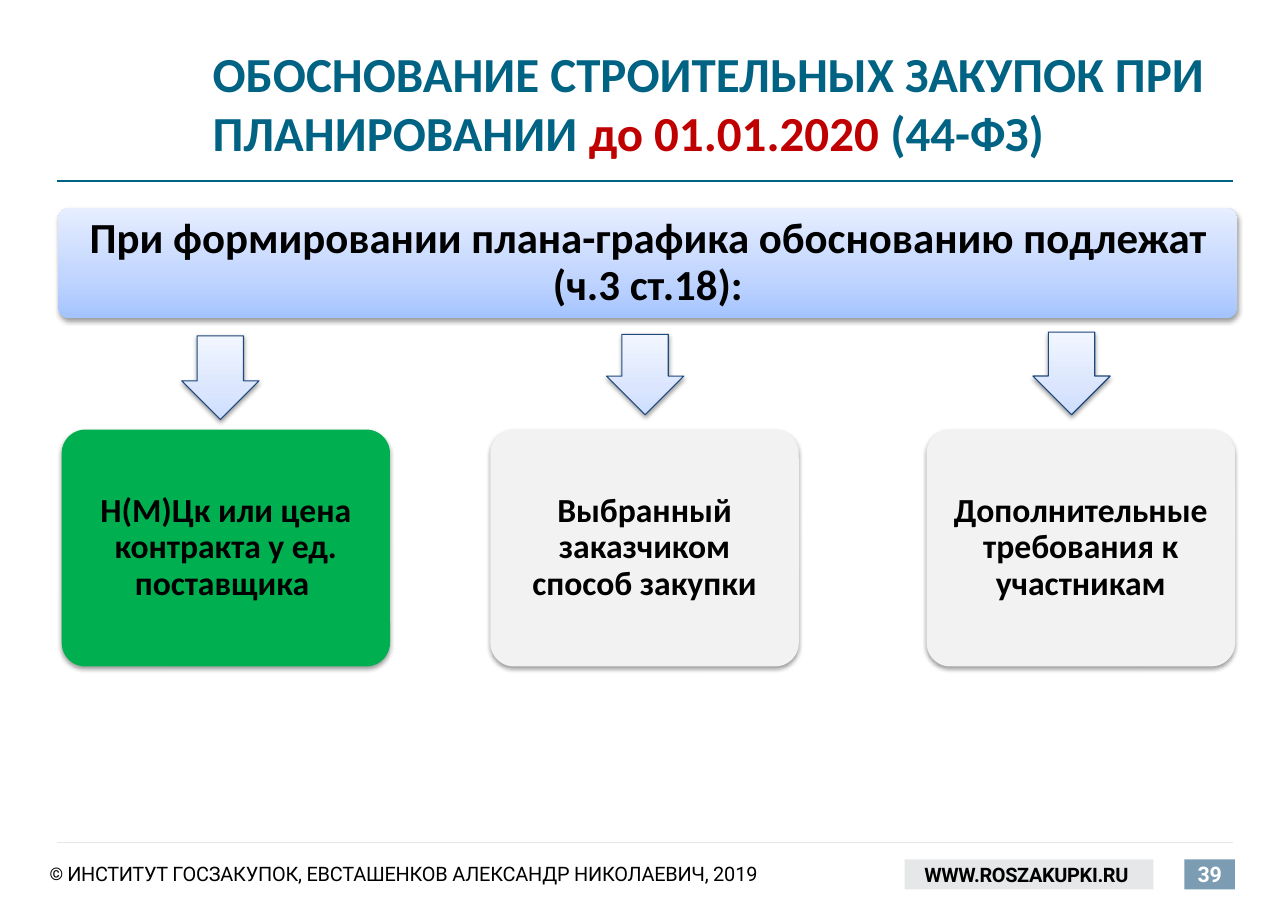
import pptx
import pptx.util
import pptx.dml.color
import pptx.enum.dml
import pptx.enum.shapes
import pptx.enum.text
import pptx.oxml
import pptx.oxml.ns
import copy

WIDTH, HEIGHT = 11.69, 8.27
# The slide is a grid of 100 columns and 100 rows; boxes are (x, y, w, h) in it
COL, ROW = WIDTH / 100, HEIGHT / 100
TEAL, RED, BLACK, WHITE = "006384", "C00000", "000000", "FFFFFF"
GREY, STEEL, NAVY, GREEN, PALE = "E6E7E8", "7C9CB4", "1F497D", "00B050", "F2F2F2"
BAND_STOPS = [(0, "A4C4FF"), (0.35, "BFD4FF"), (1, "E6EEFF")]
ARROW_STOPS = [(0, "CDDDFF"), (0.35, "DBE6FE"), (1, "F1F5FF")]
SHAPE = pptx.enum.shapes.MSO_SHAPE
ALIGN = pptx.enum.text.PP_ALIGN
qn = pptx.oxml.ns.qn


def rgb(value):
    return pptx.dml.color.RGBColor.from_string(value)


def place(box, x, y, w, h):
    """Lengths of a part that sits at x, y inside the box."""
    return [pptx.util.Inches(v) for v in
            ((box[0] + x) * COL, (box[1] + y) * ROW, w * COL, h * ROW)]


def add_run(p, text, color, size, spacing=0, baseline=0, **format):
    r = p.add_run()
    r.text = text
    for name, value in format.items():
        setattr(r.font, name, value)
    r.font.size = pptx.util.Pt(size)
    r.font.color.rgb = rgb(color)
    for name, value in {"spc": spacing, "baseline": baseline}.items():
        if value:
            r.font._element.set(name, str(value))


def set_frame(tf, side=0, edge=0):
    values = {
        "word_wrap": True,
        "auto_size": pptx.enum.text.MSO_AUTO_SIZE.NONE,
        "vertical_anchor": pptx.enum.text.MSO_ANCHOR.MIDDLE,
        "margin_left": pptx.util.Inches(side),
        "margin_right": pptx.util.Inches(side),
        "margin_top": pptx.util.Inches(edge),
        "margin_bottom": pptx.util.Inches(edge),
    }
    for name, value in values.items():
        setattr(tf, name, value)
    return tf.paragraphs[0]


def add_gradient(sp, stops):
    sp.fill.gradient()
    sp.fill.gradient_angle = 90
    stop_list = sp._element.spPr.find(qn("a:gradFill")).find(qn("a:gsLst"))
    stop_list.append(copy.deepcopy(stop_list[0]))
    for stop, (position, color) in zip(sp.fill.gradient_stops, stops):
        stop.color.rgb = rgb(color)
        stop.position = position


def add_shadow(sp):
    sp._element.spPr.append(pptx.oxml.parse_xml(
        '<a:effectLst xmlns:a="http://schemas.openxmlformats.org/drawingml/2006/main">'
        '<a:outerShdw blurRad="40000" dist="20000" dir="5400000" rotWithShape="0">'
        '<a:srgbClr val="000000"><a:alpha val="38000"/></a:srgbClr>'
        '</a:outerShdw></a:effectLst>'))


def add_block(s, kind, position, fill, line=None, shadow=True):
    sp = s.shapes.add_shape(kind, *position)
    if isinstance(fill, list):
        add_gradient(sp, fill)
    else:
        sp.fill.solid()
        sp.fill.fore_color.rgb = rgb(fill)
    if line:
        sp.line.color.rgb = rgb(line)
        sp.line.width = pptx.util.Pt(0.75)
    else:
        sp.line.fill.background()
    if shadow:
        add_shadow(sp)
    else:
        sp.shadow.inherit = False
    return sp


def add_rule(s, box, x, y, w, color, width):
    left, top, length, _ = place(box, x, y, w, 0)
    line = s.shapes.add_connector(pptx.enum.shapes.MSO_CONNECTOR.STRAIGHT,
                                  left, top, left + length, top)
    line.line.color.rgb = rgb(color)
    line.line.width = pptx.util.Pt(width)
    line._element.spPr.append(pptx.oxml.parse_xml(
        '<a:effectLst xmlns:a="http://schemas.openxmlformats.org/drawingml/2006/main"/>'))


def add_label(sp, text, size, inset):
    p = set_frame(sp.text_frame, inset, inset)
    p.alignment = ALIGN.CENTER
    p.line_spacing = 0.9
    add_run(p, text, BLACK, size, name="Calibri", bold=True)


def add_header(s, box):
    title = s.shapes.title
    title.left, title.top, title.width, title.height = place(box, 12.06, 0, 79.47, 13.06)
    p = set_frame(title.text_frame)
    p.alignment = ALIGN.LEFT
    for text, color in (("ОБОСНОВАНИЕ СТРОИТЕЛЬНЫХ ЗАКУПОК ПРИ ПЛАНИРОВАНИИ ", TEAL),
                        ("до 01.01.2020 ", RED), ("(44-ФЗ)", TEAL)):
        add_run(p, text, color, 32, name="Calibri", bold=True)
    add_rule(s, box, 0, box[3], box[2], TEAL, 1.42)


def add_scheme(s, box):
    # Band across the top
    band = add_block(s, SHAPE.ROUNDED_RECTANGLE, place(box, 0, 0, box[2], 12.09), BAND_STOPS)
    band.adjustments[0] = 0.1
    add_label(band, "При формировании плана-графика обоснованию подлежат (ч.3 ст.18):", 28, 0.12)

    # Cards: column, width, fill, text
    cards = (
        (0.26, 25.49, GREEN, "Н(М)Цк или цена контракта у ед. поставщика "),
        (33.54, 23.95, PALE, "Выбранный заказчиком способ закупки"),
        (67.41, 23.95, PALE, "Дополнительные требования к участникам"),
    )
    for x, w, fill, text in cards:
        card = add_block(s, SHAPE.ROUNDED_RECTANGLE, place(box, x, 24.31, w, 26), fill)
        card.adjustments[0] = 0.1
        add_label(card, text, 22, 0.11)

    # Arrows: column, row, height
    for x, y, h in ((9.58, 14.02, 9.19), (42.56, 13.85, 8.83), (75.67, 13.6, 9.07)):
        arrow = add_block(s, SHAPE.DOWN_ARROW, place(box, x, y, 6, h), ARROW_STOPS, NAVY)
        arrow.adjustments[0] = 0.6
        arrow.adjustments[1] = 0.5


def add_footer(s, box):
    add_rule(s, box, 0.6, 0, 91.27, GREY, 0.85)

    # Copyright line
    sp = s.shapes.add_textbox(*place(box, 0, 1.21, 58.4, 4.96))
    p = set_frame(sp.text_frame, 0, 0.1)
    p.line_spacing = pptx.util.Pt(14.8)
    for text, size, spacing, baseline in (
            ("© ", 19.5, 0, 4000), ("ИНСТИТУТ ", 13, -20, 0),
            ("ГОСЗАКУПОК, ЕВСТАШЕНКОВ АЛЕКСАНДР НИКОЛАЕВИЧ, ", 13, -10, 0),
            ("2019", 13, 0, 0)):
        add_run(p, text, BLACK, size, spacing, baseline, name="Roboto")

    # Web address and page number
    for x, w, fill, text, color, size, align, inset in (
            (66.38, 19.33, GREY, "WWW.ROSZAKUPKI.RU", BLACK, 13, ALIGN.LEFT, 0.18),
            (88.11, 3.93, STEEL, "39", WHITE, 14, ALIGN.CENTER, 0)):
        tag = add_block(s, SHAPE.RECTANGLE, place(box, x, 1.82, w, 3.3), fill, shadow=False)
        p = set_frame(tag.text_frame, inset)
        p.alignment = align
        add_run(p, text, color, size, -20, name="Roboto", bold=True)


def main():
    prs = pptx.Presentation()
    prs.slide_width = pptx.util.Inches(WIDTH)
    prs.slide_height = pptx.util.Inches(HEIGHT)
    s = prs.slides.add_slide(prs.slide_layouts[5])
    add_header(s, (4.45, 4.72, 91.27, 15.11))
    add_scheme(s, (4.53, 22.85, 91.53, 50.3))
    add_footer(s, (3.85, 92.5, 92, 7.5))
    prs.save("out.pptx")


if __name__ == "__main__":
    main()
